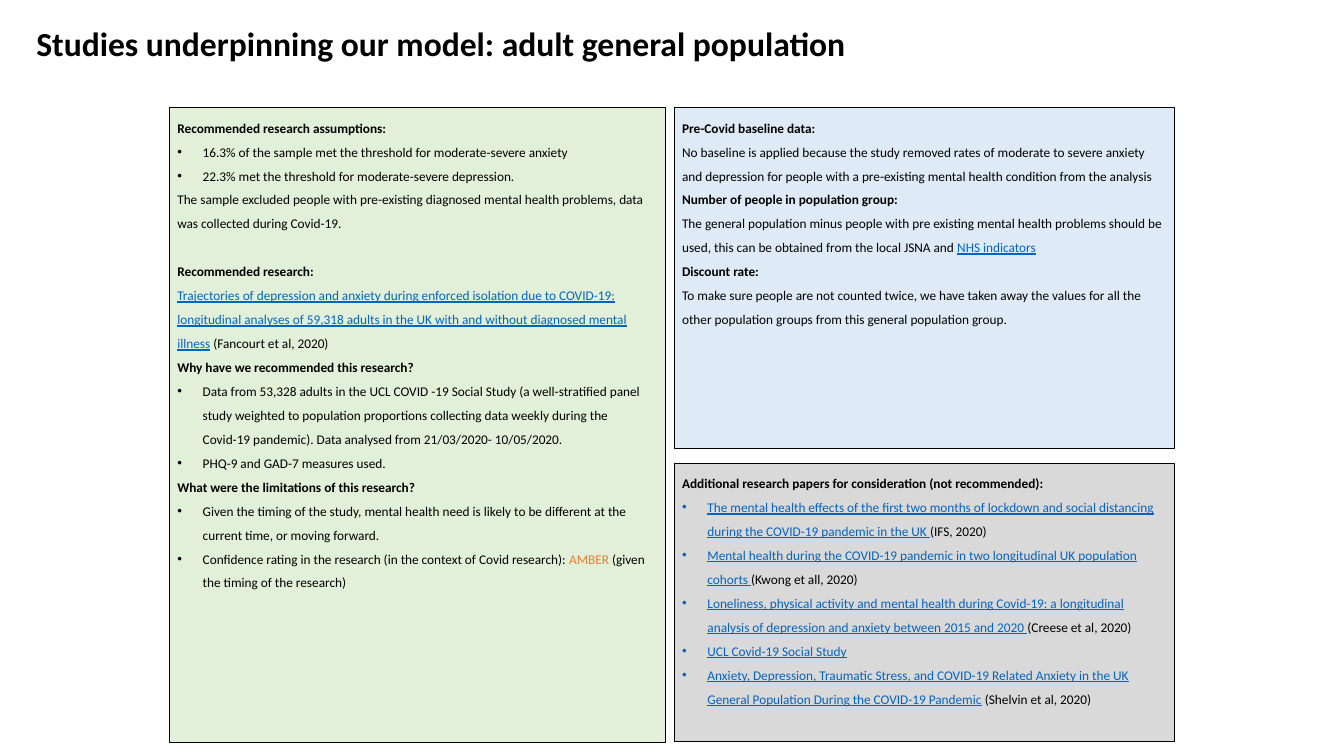
"""Build the slide on studies behind the adult general population model."""
from lxml.etree import SubElement
from pptx import Presentation
from pptx.dml.color import RGBColor
from pptx.enum.shapes import MSO_SHAPE as Preset
from pptx.enum.text import MSO_ANCHOR as Anchor, MSO_AUTO_SIZE as AutoSize, PP_ALIGN as Align
from pptx.oxml.ns import qn
from pptx.util import Cm, Pt

BLACK, LINK, AMBER = "000000", "0563C1", "ED7D31"
LEFT, TOP, RIGHT = 4.27, 2.72, 16.99
RIGHT_WIDTH = 12.62


def color(hex_value):
    return RGBColor.from_string(hex_value)


def add_run(paragraph, text, size, hex_value=BLACK, bold=False):
    run = paragraph.add_run()
    run.text = text
    run.font.name = "Calibri"
    run.font.size = Pt(size)
    run.font.bold = bold
    run.font.underline = hex_value == LINK
    run.font.color.rgb = color(hex_value)


study_box = [
    ("heading", [("Recommended research assumptions:", BLACK)]),
    ("bullet", [("16.3% of the sample met the threshold for moderate-severe anxiety", BLACK)]),
    ("bullet", [("22.3% met the threshold for moderate-severe depression.", BLACK)]),
    ("text", [("The sample excluded people with pre-existing diagnosed mental health problems, "
               "data was collected during Covid-19.", BLACK)]),
    ("spaced heading", [("Recommended research:", BLACK)]),
    ("text", [("Trajectories of depression and anxiety during enforced isolation due to COVID-19: "
               "longitudinal analyses of 59,318 adults in the UK with and without diagnosed "
               "mental illness", LINK), (" (Fancourt et al, 2020)", BLACK)]),
    ("heading", [("Why have we recommended this research?", BLACK)]),
    ("bullet", [("Data from 53,328 adults in the UCL COVID -19 Social Study (a well-stratified "
                 "panel study weighted to population proportions collecting data weekly during "
                 "the Covid-19 pandemic). Data analysed from 21/03/2020- 10/05/2020.", BLACK)]),
    ("bullet", [("PHQ-9 and GAD-7 measures used.", BLACK)]),
    ("heading", [("What were the limitations of this research?", BLACK)]),
    ("bullet", [("Given the timing of the study, mental health need is likely to be different "
                 "at the current time, or moving forward.", BLACK)]),
    ("bullet", [("Confidence rating in the research (in the context of Covid research): ", BLACK),
                ("AMBER ", AMBER), ("(given the timing of the research)", BLACK)]),
]
papers_box = [
    ("heading", [("Additional research papers for consideration (not recommended):", BLACK)]),
    ("bullet", [("The mental health effects of the first two months of lockdown and social "
                 "distancing during the COVID-19 pandemic in the UK ", LINK),
                ("(IFS, 2020)", BLACK)]),
    ("bullet", [("Mental health during the COVID-19 pandemic in two longitudinal UK population "
                 "cohorts ", LINK), ("(Kwong et all, 2020)", BLACK)]),
    ("bullet", [("Loneliness, physical activity and mental health during Covid-19: a longitudinal "
                 "analysis of depression and anxiety between 2015 and 2020 ", LINK),
                ("(Creese et al, 2020)", BLACK)]),
    ("bullet", [("UCL Covid-19 Social Study", LINK)]),
    ("bullet", [("Anxiety, Depression, Traumatic Stress, and COVID-19 Related Anxiety in the UK "
                 "General Population During the COVID-19 Pandemic", LINK),
                (" (Shelvin et al, 2020)", BLACK)]),
]
baseline_box = [
    ("heading", [("Pre-Covid baseline data:", BLACK)]),
    ("text", [("No baseline is applied because the study removed rates of moderate to severe "
               "anxiety and depression for people with a pre-existing mental health condition "
               "from the analysis", BLACK)]),
    ("heading", [("Number of people in population group:", BLACK)]),
    ("text", [("The general population minus people with pre existing mental health problems "
               "should be used, this can be obtained from the local JSNA and ", BLACK),
              ("NHS indicators", LINK)]),
    ("heading", [("Discount rate:", BLACK)]),
    ("text", [("To make sure people are not counted twice, we have taken away the values for all "
               "the other population groups from this general population group.", BLACK)]),
]
boxes = [
    (LEFT, TOP, 12.5, 16, "E2F0D9", study_box),
    (RIGHT, 11.68, RIGHT_WIDTH, 7.01, "D9D9D9", papers_box),
    (RIGHT, TOP, RIGHT_WIDTH, 8.59, "DEEBF7", baseline_box),
]

presentation = Presentation()
presentation.slide_width, presentation.slide_height = Cm(33.87), Cm(19.05)
slide = presentation.slides.add_slide(presentation.slide_layouts[5])

title = slide.shapes.title
title.left, title.top, title.width, title.height = Cm(0.66), Cm(0.48), Cm(23.62), Cm(1.35)
title.text_frame.auto_size = AutoSize.NONE
title.text_frame.vertical_anchor = Anchor.MIDDLE
title_paragraph = title.text_frame.paragraphs[0]
title_paragraph.alignment = Align.LEFT
title_paragraph.line_spacing = 0.9
add_run(title_paragraph, "Studies underpinning our model: adult general population", 24, bold=True)

for left, top, width, height, fill, content in boxes:
    box = slide.shapes.add_shape(Preset.RECTANGLE, Cm(left), Cm(top), Cm(width), Cm(height))
    box.shadow.inherit = False
    box.fill.solid()
    box.fill.fore_color.rgb = color(fill)
    box.line.color.rgb = color(BLACK)
    box.line.width = Pt(0.75)
    frame = box.text_frame
    frame.word_wrap = True
    frame.vertical_anchor = Anchor.TOP
    frame.margin_left = frame.margin_right = Cm(0.2)
    frame.margin_top = frame.margin_bottom = Cm(0.1)
    for index, (kind, runs) in enumerate(content):
        paragraph = frame.add_paragraph() if index else frame.paragraphs[0]
        paragraph.alignment = Align.LEFT
        paragraph.line_spacing = 1.5
        if kind == "spaced heading":
            paragraph.space_before = Pt(17.2)
        if kind == "bullet":
            properties = paragraph._p.get_or_add_pPr()
            properties.set("marL", str(Cm(0.64)))
            properties.set("indent", str(-Cm(0.64)))
            SubElement(properties, qn("a:buFont"), typeface="Arial")
            SubElement(properties, qn("a:buChar"), char="•")
        for text, hex_value in runs:
            add_run(paragraph, text, 9.5, hex_value, bold="heading" in kind)

presentation.save("out.pptx")
